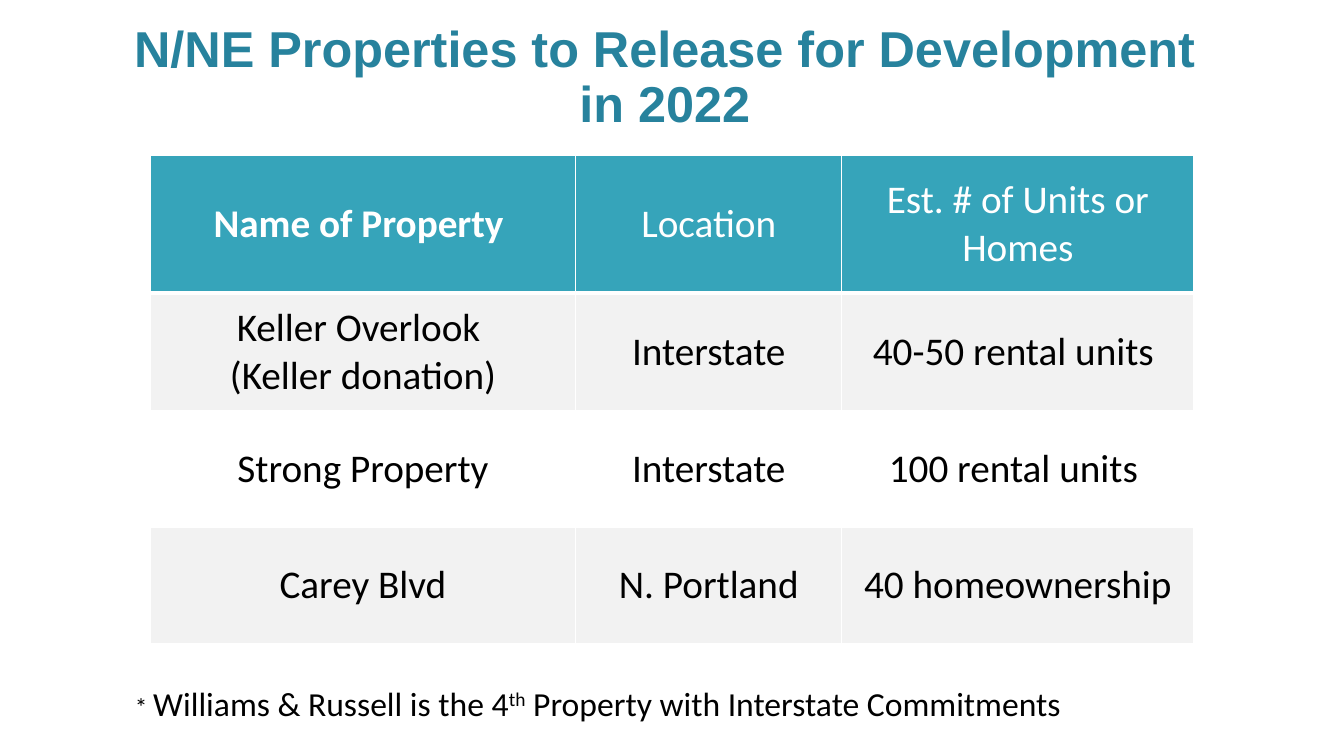
from lxml import etree
from pptx import Presentation
from pptx.dml.color import RGBColor
from pptx.enum.text import MSO_ANCHOR, MSO_AUTO_SIZE, PP_ALIGN
from pptx.oxml.ns import qn
from pptx.util import Inches, Pt

CENTER = PP_ALIGN.CENTER
MIDDLE, BOTTOM = MSO_ANCHOR.MIDDLE, MSO_ANCHOR.BOTTOM
GROW = MSO_AUTO_SIZE.SHAPE_TO_FIT_TEXT
NO_FIT = MSO_AUTO_SIZE.NONE

COLORS = {"title": "27829D", "head": "36A4BA", "band": "F2F2F2",
          "white": "FFFFFF", "text": "000000"}

COLS = [4.22, 2.64, 3.49]
HEAD_H, ROW_H = 1.37, 1.16
ROWS = [
    ["Name of Property ", "Location", "Est. # of Units or Homes"],
    ["Keller Overlook \n(Keller donation)", "Interstate", "40-50 rental units "],
    ["Strong Property", "Interstate", "100 rental units "],
    ["Carey Blvd", "N. Portland", "40 homeownership"],
]


def assign(target, values):
    for name, value in values.items():
        setattr(target, name, value)


def style(font, color, size, name="Calibri", bold=False):
    assign(font, {"name": name, "size": Pt(size), "bold": bold})
    font.color.rgb = RGBColor.from_string(COLORS[color])


def place(shape, box):
    for name, value in zip(("left", "top", "width", "height"), box):
        setattr(shape, name, Inches(value))


def add_title(slide, box):
    title = slide.shapes.title
    place(title, box)
    frame = title.text_frame
    assign(frame, {"vertical_anchor": BOTTOM, "word_wrap": True,
                   "auto_size": NO_FIT})
    para = frame.paragraphs[0]
    para.text = "N/NE Properties to Release for Development \vin 2022 "
    assign(para, {"alignment": CENTER, "line_spacing": 0.9})
    for run in para.runs:
        style(run.font, "title", 36, "Arial", True)


def add_edges(cell, head):
    # Borders come before the fill in the cell properties
    props = cell._tc.get_or_add_tcPr()
    for spot, side in enumerate("LRTB"):
        heavy = head and side == "B"
        line = etree.Element(qn(f"a:ln{side}"), w=str(Pt(3 if heavy else 1)))
        fill = etree.SubElement(line, qn("a:solidFill"))
        etree.SubElement(fill, qn("a:srgbClr"), val=COLORS["white"])
        props.insert(spot, line)


def fill_cell(cell, text, row, col):
    head = row == 0
    assign(cell, {"text": text, "vertical_anchor": MIDDLE,
                  "margin_left": Inches(0.07), "margin_right": Inches(0.07),
                  "margin_top": Inches(0.03), "margin_bottom": Inches(0.03)})
    for para in cell.text_frame.paragraphs:
        para.alignment = CENTER
        for run in para.runs:
            style(run.font, "white" if head else "text", 28,
                  bold=head and col == 0)
    if head or row % 2:
        cell.fill.solid()
        tint = COLORS["head" if head else "band"]
        cell.fill.fore_color.rgb = RGBColor.from_string(tint)
    else:
        cell.fill.background()
    add_edges(cell, head)


def add_grid(slide, left, top):
    heights = [HEAD_H] + [ROW_H] * (len(ROWS) - 1)
    box = [Inches(n) for n in (left, top, sum(COLS), sum(heights))]
    table = slide.shapes.add_table(len(ROWS), len(COLS), *box).table
    for column, width in zip(table.columns, COLS):
        column.width = Inches(width)
    for row, height in zip(table.rows, heights):
        row.height = Inches(height)
    for r, texts in enumerate(ROWS):
        for c, text in enumerate(texts):
            fill_cell(table.cell(r, c), text, r, c)


def add_note(slide, box):
    note = slide.shapes.add_textbox(*[Inches(n) for n in box])
    frame = note.text_frame
    assign(frame, {"word_wrap": True, "auto_size": GROW})
    parts = [("* ", 18, None), ("Williams & Russell is the 4", 24, None),
             ("th", 24, "30000"),
             (" Property with Interstate Commitments", 24, None)]
    for text, size, raised in parts:
        run = frame.paragraphs[0].add_run()
        run.text = text
        style(run.font, "text", size)
        if raised:
            run._r.get_or_add_rPr().set("baseline", raised)


def main():
    deck = Presentation()
    assign(deck, {"slide_width": Inches(13.33), "slide_height": Inches(7.5)})
    slide = deck.slides.add_slide(deck.slide_layouts[5])
    add_title(slide, (0.76, 0.07, 11.81, 1.3))
    add_grid(slide, 1.49, 1.54)
    add_note(slide, (1.24, 6.73, 11.08, 0.5))
    deck.save("out.pptx")


if __name__ == "__main__":
    main()
